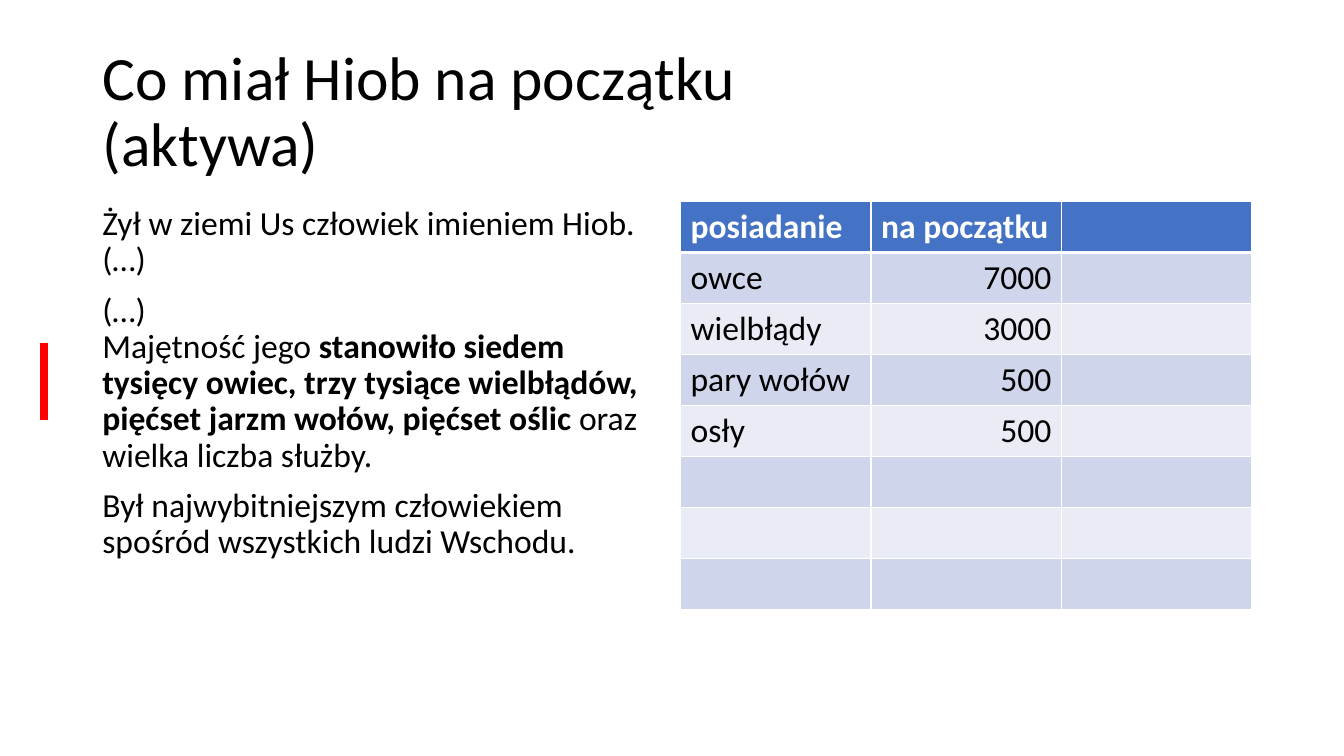
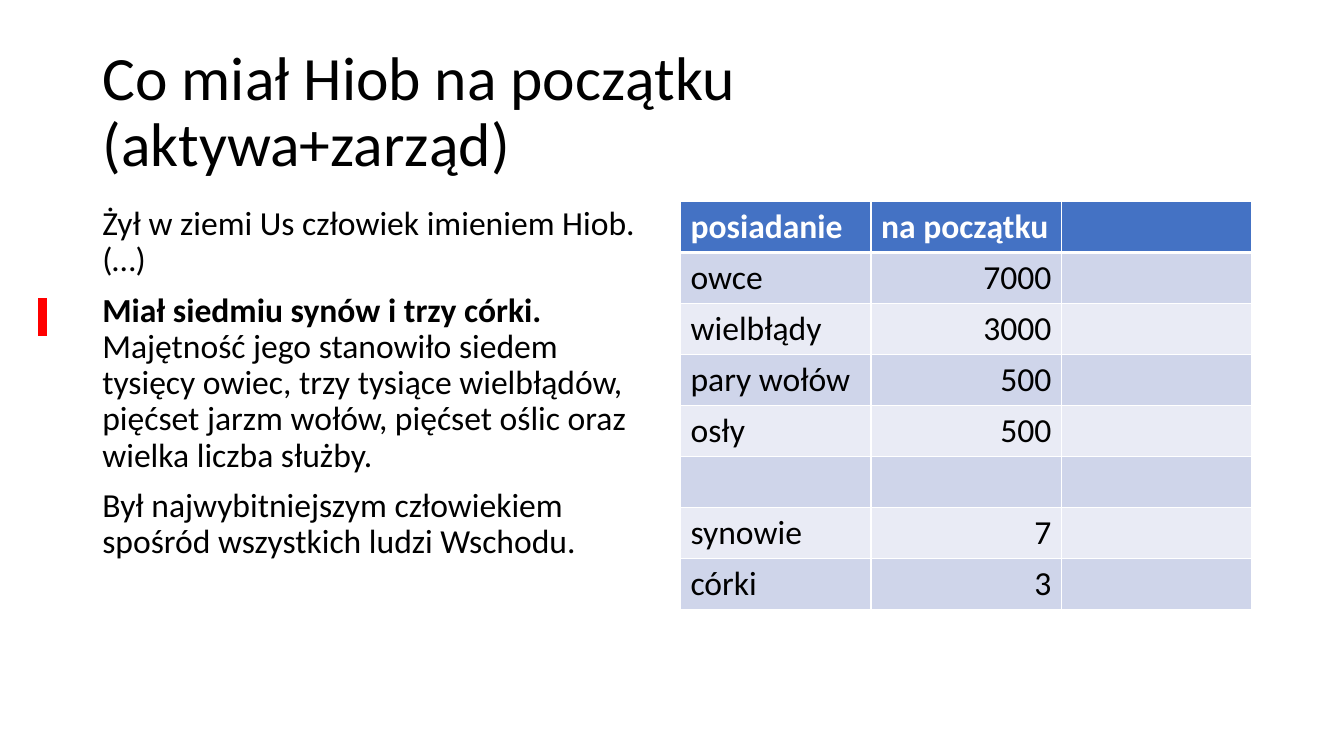
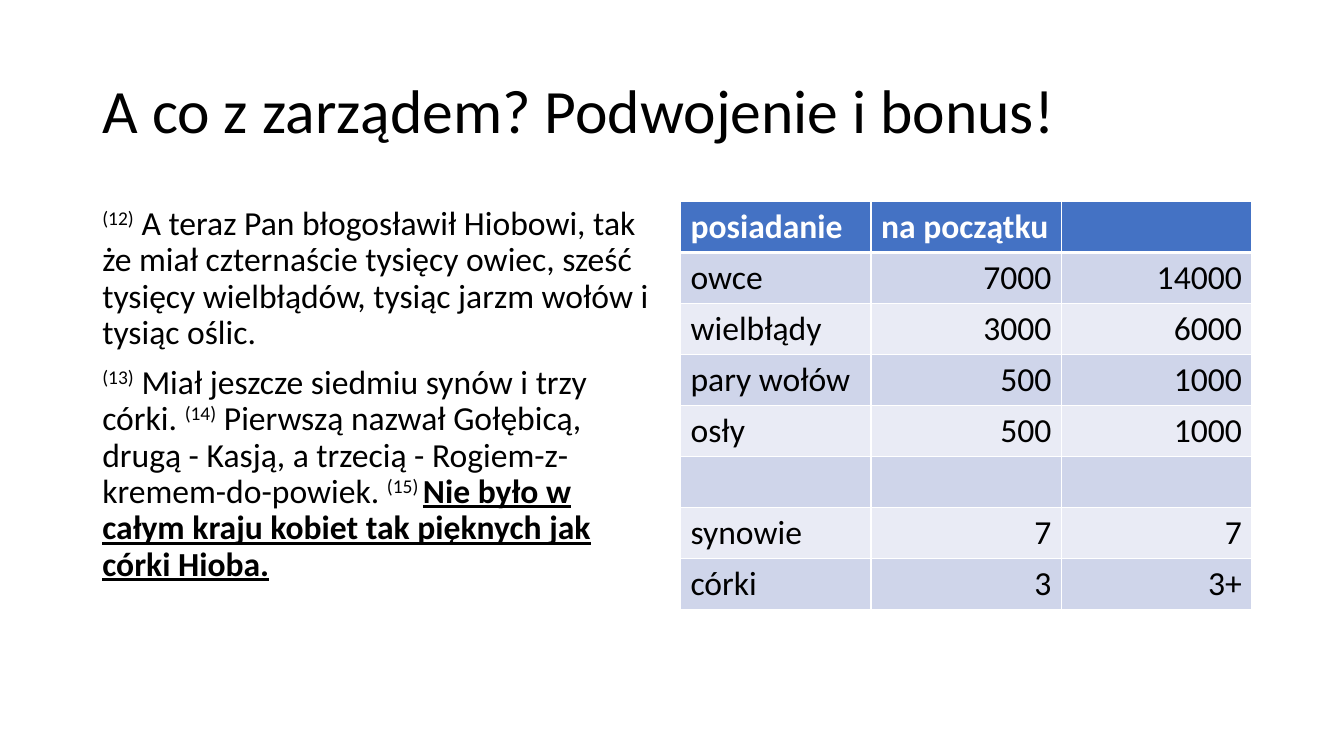
from lxml.etree import SubElement as Sub
from pptx import Presentation
from pptx.dml.color import RGBColor
from pptx.enum.shapes import MSO_CONNECTOR as Conn
from pptx.enum.text import MSO_ANCHOR as Anchor, MSO_AUTO_SIZE as Auto, PP_ALIGN as Align
from pptx.oxml.ns import qn
from pptx.util import Cm, Pt

FACE = "Calibri"
BLACK, WHITE, RED, BLUE = "000000", "FFFFFF", "FF0000", "4472C4"
BANDS = ("CFD5EA", "E9EBF5")

HEAD_BOX = (2.33, 1.02, 29.21, 3.68)
BODY_BOX = (2.33, 5.08, 14.4, 12.09)
GRID_BOX = (17.15, 5.08, 14.4, 10.28)

HEADS = ("posiadanie", "na początku", "")
GOODS = [("owce", "7000", "14000"), ("wielbłądy", "3000", "6000"),
         ("pary wołów", "500", "1000"), ("osły", "500", "1000")]
HEIRS = [("synowie", "7", "7"), ("córki", "3", "3+")]
GAP = ("", "", "")

LIVED = [("Żył w ziemi Us człowiek imieniem Hiob. (…)", "")]
GREAT = [("Był najwybitniejszym człowiekiem spośród wszystkich ludzi Wschodu.", "")]
WEALTH = ("stanowiło siedem tysięcy owiec, trzy tysiące wielbłądów, "
          "pięćset jarzm wołów, pięćset oślic")
STAFF = " oraz wielka liczba służby."


def color(code):
    return RGBColor.from_string(code)


def style(run, size, code=BLACK, bold=False):
    font = run.font
    font.name, font.size, font.bold = FACE, Pt(size), bold
    font.color.rgb = color(code)


def add_head(slide, box, text):
    head = slide.shapes.title
    head.left, head.top, head.width, head.height = map(Cm, box)
    frame = head.text_frame
    frame.word_wrap, frame.auto_size = True, Auto.NONE
    frame.vertical_anchor = Anchor.MIDDLE
    para = frame.paragraphs[0]
    para.text = text
    para.alignment, para.line_spacing = Align.LEFT, 0.9
    for run in para.runs:
        style(run, 44)


def add_body(slide, box, paras):
    frame = slide.shapes.add_textbox(*map(Cm, box)).text_frame
    frame.word_wrap = True
    for i, parts in enumerate(paras):
        para = frame.add_paragraph() if i else frame.paragraphs[0]
        para.line_spacing, para.space_before = 0.9, Pt(10)
        for text, marks in parts:
            if text == "\n":
                para.add_line_break()
                continue
            run = para.add_run()
            run.text = text
            style(run, 24, bold="b" in marks)
            run.font.underline = "u" in marks
            if "^" in marks:
                run.font._element.set("baseline", "30000")


def add_edges(cell, top, foot):
    props = cell._tc.get_or_add_tcPr()
    sides = (("a:lnL", 1), ("a:lnR", 1), ("a:lnT", top), ("a:lnB", foot))
    for i, (side, width) in enumerate(sides):
        line = props.makeelement(qn(side), {"w": str(Pt(width))})
        fill = Sub(line, qn("a:solidFill"))
        Sub(fill, qn("a:srgbClr"), val=WHITE)
        props.insert(i, line)


def add_grid(slide, box, rows):
    x, y, width, height = box
    table = slide.shapes.add_table(len(rows), len(HEADS), *map(Cm, box)).table
    for col in table.columns:
        col.width = Cm(width / len(HEADS))
    for r, row in enumerate(rows):
        table.rows[r].height = Cm(height / len(rows))
        for c, text in enumerate(row):
            cell = table.cell(r, c)
            cell.fill.solid()
            cell.fill.fore_color.rgb = color(BANDS[(r - 1) % 2] if r else BLUE)
            add_edges(cell, 3 if r == 1 else 1, 1 if r else 3)
            if text:
                para = cell.text_frame.paragraphs[0]
                para.text = text
                para.alignment = Align.RIGHT if r and c else Align.LEFT
                style(para.runs[0], 24, BLACK if r else WHITE, not r)


def add_mark(slide, box, left, down, size):
    x, y = box[0] - left, box[1] + down
    line = slide.shapes.add_connector(
        Conn.STRAIGHT, Cm(x), Cm(y), Cm(x), Cm(y + size))
    line.line.color.rgb, line.line.width = color(RED), Pt(6)
    Sub(line._element.spPr, qn("a:effectLst"))


def add_slide(deck, title, paras, rows, mark=None):
    slide = deck.slides.add_slide(deck.slide_layouts[5])
    add_head(slide, HEAD_BOX, title)
    add_body(slide, BODY_BOX, paras)
    add_grid(slide, GRID_BOX, [HEADS] + rows)
    if mark:
        add_mark(slide, BODY_BOX, *mark)


def main():
    deck = Presentation()
    deck.slide_width, deck.slide_height = Cm(33.87), Cm(19.05)
    start = [(name, count, "") for name, count, _ in GOODS]
    heirs = [(name, count, "") for name, count, _ in HEIRS]

    add_slide(deck, "Co miał Hiob na początku\n(aktywa)", [
        LIVED,
        [("(…)", ""), ("\n", ""), ("Majętność jego ", ""),
         (WEALTH, "b"), (STAFF, "")],
        GREAT,
    ], start + [GAP] * 3, (1.22, 3.56, 1.95))

    add_slide(deck, "Co miał Hiob na początku\n(aktywa+zarząd)", [
        LIVED,
        [("Miał siedmiu synów i trzy córki. ", "b"),
         ("Majętność jego " + WEALTH + STAFF, "")],
        GREAT,
    ], start + [GAP] + heirs, (1.26, 2.44, 0.94))

    add_slide(deck, "A co z zarządem? Podwojenie i bonus!", [
        [("(12)", "^"),
         (" A teraz Pan błogosławił Hiobowi, tak że miał czternaście tysięcy "
          "owiec, sześć tysięcy wielbłądów, tysiąc jarzm wołów i tysiąc oślic.", "")],
        [("(13)", "^"), (" Miał jeszcze siedmiu synów i trzy córki. ", ""),
         ("(14)", "^"),
         (" Pierwszą nazwał Gołębicą, drugą - Kasją, a trzecią - "
          "Rogiem-z-kremem-do-powiek. ", ""),
         ("(15) ", "^"),
         ("Nie było w całym kraju kobiet tak pięknych jak córki Hioba.", "bu")],
    ], GOODS + [GAP] + HEIRS)

    deck.save("out.pptx")


if __name__ == "__main__":
    main()
